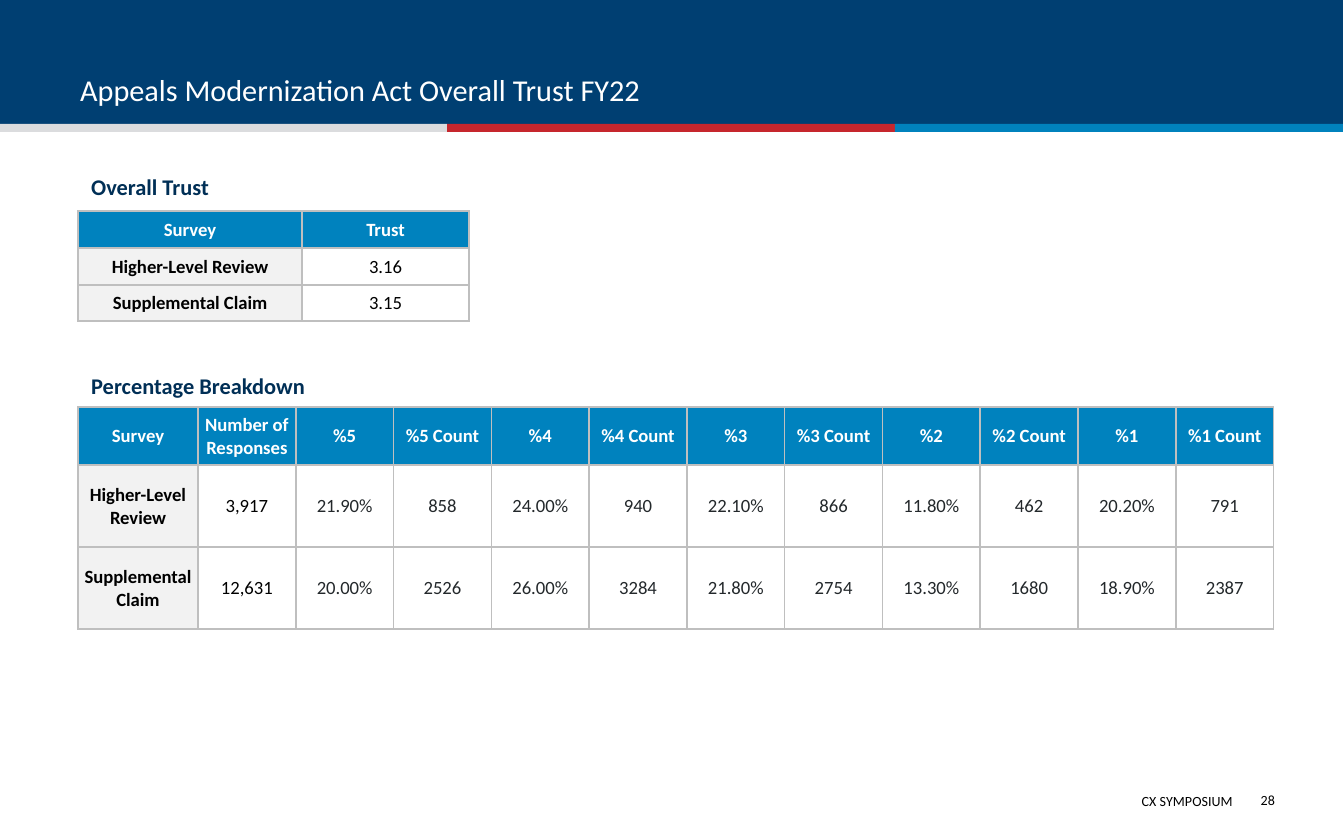
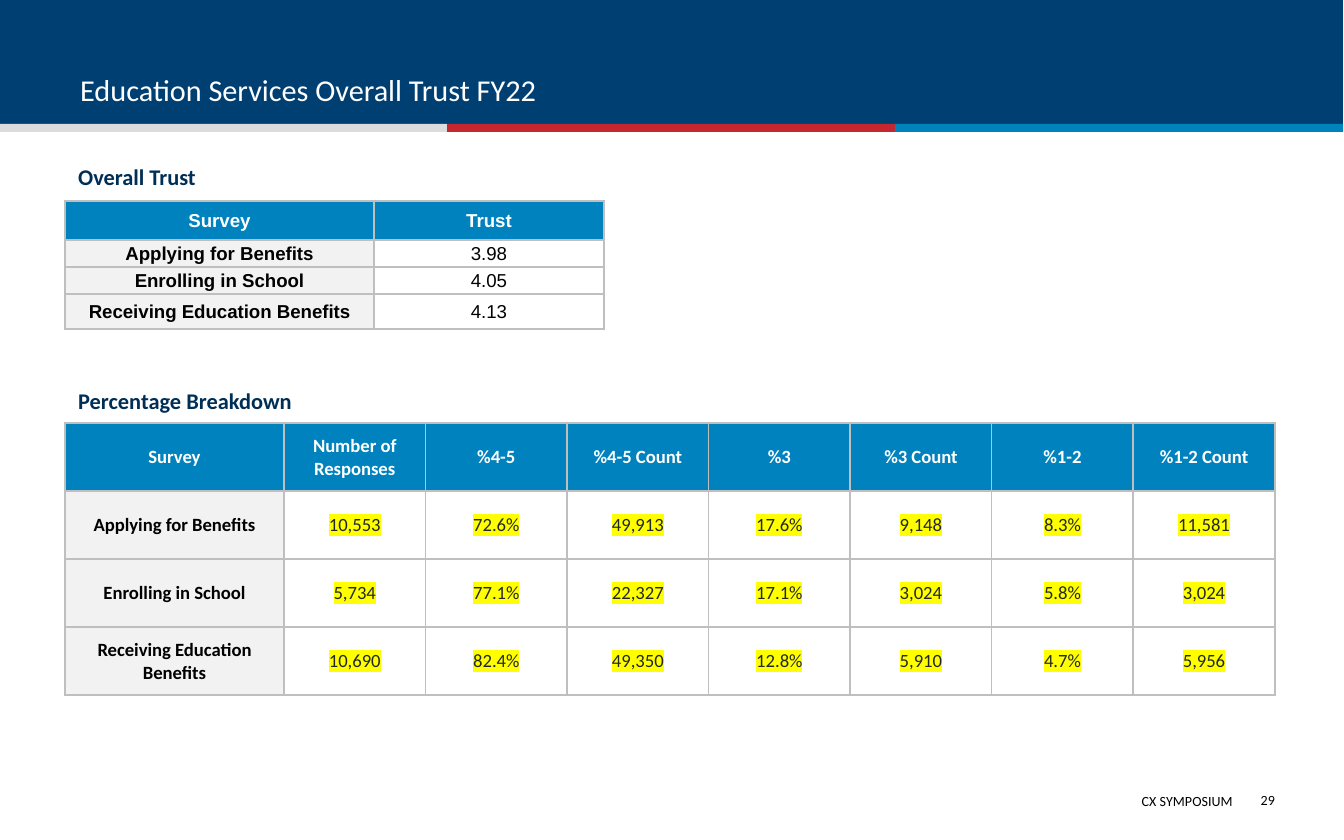
import lxml.etree
import pptx
import pptx.dml.color
import pptx.enum.shapes
import pptx.enum.text
import pptx.oxml.ns
import pptx.util

COLORS = {
    "navy": "003F72", "silver": "DBDCDE", "red": "C6262D", "blue": "0082BD",
    "header": "0082BE", "label": "F2F2F2", "border": "BFBFBF",
    "heading": "002F56", "white": "FFFFFF", "black": "000000",
    "gray": "23282B", "marker": "FFFF00",
}
ALIGN = pptx.enum.text.PP_ALIGN
ANCHOR = pptx.enum.text.MSO_ANCHOR
PAGE_WIDTH, PAGE_HEIGHT = 1344, 840
EMU_PER_PX = 914400 / 134.4
FOOTER = "CX SYMPOSIUM"

SLIDES = [
    {
        "title": "Appeals Modernization Act Overall Trust FY22",
        "number": "28",
        "left": 78,
        "sections": [
            {
                "heading": "Overall Trust", "heading_box": (167, 1196, 146),
                "top": 211, "width": 391, "label_width": 224,
                "row_heights": [37, 37, 36],
                "rows": [
                    ["Survey", "Trust"],
                    ["Higher-Level Review", "3.16"],
                    ["Supplemental Claim", "3.15"],
                ],
            },
            {
                "heading": "Percentage Breakdown", "heading_box": (366, 1196, 399),
                "top": 407, "width": 1196, "label_width": 120,
                "row_heights": [58, 82, 82], "gray_from": 2,
                "rows": [
                    ["Survey", "Number of Responses", "%5", "%5 Count", "%4", "%4 Count",
                     "%3", "%3 Count", "%2", "%2 Count", "%1", "%1 Count"],
                    ["Higher-Level Review", "3,917", "21.90%", "858", "24.00%", "940",
                     "22.10%", "866", "11.80%", "462", "20.20%", "791"],
                    ["Supplemental Claim", "12,631", "20.00%", "2526", "26.00%", "3284",
                     "21.80%", "2754", "13.30%", "1680", "18.90%", "2387"],
                ],
            },
        ],
    },
    {
        "title": "Education Services Overall Trust FY22",
        "number": "29",
        "left": 65,
        "sections": [
            {
                "heading": "Overall Trust", "heading_box": (157, 1210, 226),
                "top": 201, "width": 539, "label_width": 309,
                "row_heights": [39, 27, 27, 35], "font": "Arial",
                "rows": [
                    ["Survey", "Trust"],
                    ["Applying for Benefits", "3.98"],
                    ["Enrolling in School", "4.05"],
                    ["Receiving Education Benefits", "4.13"],
                ],
            },
            {
                "heading": "Percentage Breakdown", "heading_box": (381, 1210, 351),
                "top": 423, "width": 1210, "label_width": 219,
                "row_heights": [68] * 4, "gray_from": 1, "highlight": True,
                "rows": [
                    ["Survey", "Number of Responses", "%4-5", "%4-5 Count",
                     "%3", "%3 Count", "%1-2", "%1-2 Count"],
                    ["Applying for Benefits", "10,553", "72.6%", "49,913",
                     "17.6%", "9,148", "8.3%", "11,581"],
                    ["Enrolling in School", "5,734", "77.1%", "22,327",
                     "17.1%", "3,024", "5.8%", "3,024"],
                    ["Receiving Education Benefits", "10,690", "82.4%", "49,350",
                     "12.8%", "5,910", "4.7%", "5,956"],
                ],
            },
        ],
    },
]


def px(length):
    return pptx.util.Emu(round(length * EMU_PER_PX))


def rgb(name):
    return pptx.dml.color.RGBColor.from_string(COLORS[name])


def add_child(parent, tag, **attributes):
    return lxml.etree.SubElement(parent, pptx.oxml.ns.qn(tag), **attributes)


def style(para, size, color, bold=False, font="Calibri", align=ALIGN.LEFT):
    para.alignment = align
    para.font.size = pptx.util.Pt(size)
    para.font.name = font
    para.font.bold = bold
    para.font.color.rgb = rgb(color)


def add_bar(page, left, top, width, height, color):
    bar = page.shapes.add_shape(
        pptx.enum.shapes.MSO_SHAPE.RECTANGLE, px(left), px(top), px(width), px(height))
    bar.shadow.inherit = False
    bar.fill.solid()
    bar.fill.fore_color.rgb = rgb(color)
    bar.line.fill.background()


def add_text(page, text, area, size, color, anchor=ANCHOR.TOP, **look):
    box = page.shapes.add_textbox(*map(px, area))
    frame = box.text_frame
    frame.word_wrap = True
    frame.vertical_anchor = anchor
    frame.text = text
    style(frame.paragraphs[0], size, color, **look)
    return frame


def add_frame(page, title, number):
    add_bar(page, -1, 0, PAGE_WIDTH, 128, "navy")
    strip_width = PAGE_WIDTH // 3
    for index, color in enumerate(("silver", "red", "blue")):
        add_bar(page, index * strip_width - 1, 124, strip_width, 8, color)
    add_text(page, FOOTER, (556, 786, 690, 31), 7.5, "black", align=ALIGN.RIGHT)
    add_text(page, title, (67, 15, 1210, 99), 16.2, "white", anchor=ANCHOR.BOTTOM)
    frame = add_text(page, number, (1239, 778, 36, 44), 7.5, "black",
                     anchor=ANCHOR.MIDDLE, align=ALIGN.RIGHT)
    frame.margin_left = frame.margin_right = frame.margin_top = frame.margin_bottom = 0


def add_borders(cell):
    properties = cell._tc.get_or_add_tcPr()
    for side in ("a:lnL", "a:lnR", "a:lnT", "a:lnB"):
        line = add_child(properties, side, w=str(pptx.util.Pt(1)))
        add_child(add_child(line, "a:solidFill"), "a:srgbClr", val=COLORS["border"])


def fill_cell(cell, text, row, column, section):
    is_header, is_label = row == 0, column == 0
    marked = section.get("highlight", False) and not (is_header or is_label)
    margin = 3 if marked else 1
    cell.margin_left = cell.margin_right = cell.margin_top = px(margin)
    cell.margin_bottom = px(margin if marked else 0)
    cell.vertical_anchor = ANCHOR.MIDDLE
    add_borders(cell)
    if is_header or is_label:
        cell.fill.solid()
        cell.fill.fore_color.rgb = rgb("header" if is_header else "label")
    else:
        cell.fill.background()
    if is_header:
        color = "white"
    else:
        color = "gray" if column >= section.get("gray_from", len(section["rows"][0])) else "black"
    para = cell.text_frame.paragraphs[0]
    span = para.add_run()
    span.text = text
    style(para, 10, color, bold=is_header or is_label,
          font=section.get("font", "Calibri"), align=ALIGN.CENTER)
    if marked:
        highlight = add_child(span._r.get_or_add_rPr(), "a:highlight")
        add_child(highlight, "a:srgbClr", val=COLORS["marker"])


def add_section_table(page, left, section):
    rows, heights, width = section["rows"], section["row_heights"], section["width"]
    column_count = len(rows[0])
    table = page.shapes.add_table(
        len(rows), column_count,
        px(left), px(section["top"]), px(width), px(sum(heights))).table
    table.first_row = table.horz_banding = False
    value_width = (width - section["label_width"]) / (column_count - 1)
    for index, column in enumerate(table.columns):
        column.width = px(value_width if index else section["label_width"])
    for row_index, (texts, height) in enumerate(zip(rows, heights)):
        table.rows[row_index].height = px(height)
        for column_index, text in enumerate(texts):
            fill_cell(table.cell(row_index, column_index), text,
                      row_index, column_index, section)


def main():
    deck = pptx.Presentation()
    deck.slide_width, deck.slide_height = px(PAGE_WIDTH), px(PAGE_HEIGHT)
    for content in SLIDES:
        page = deck.slides.add_slide(deck.slide_layouts[6])
        add_frame(page, content["title"], content["number"])
        for section in content["sections"]:
            top, width, height = section["heading_box"]
            frame = add_text(page, section["heading"], (content["left"], top, width, height),
                             12, "heading", bold=True)
            frame.paragraphs[0].space_before = pptx.util.Pt(2.4)
        for section in content["sections"]:
            add_section_table(page, content["left"], section)
    deck.save("out.pptx")


if __name__ == "__main__":
    main()
